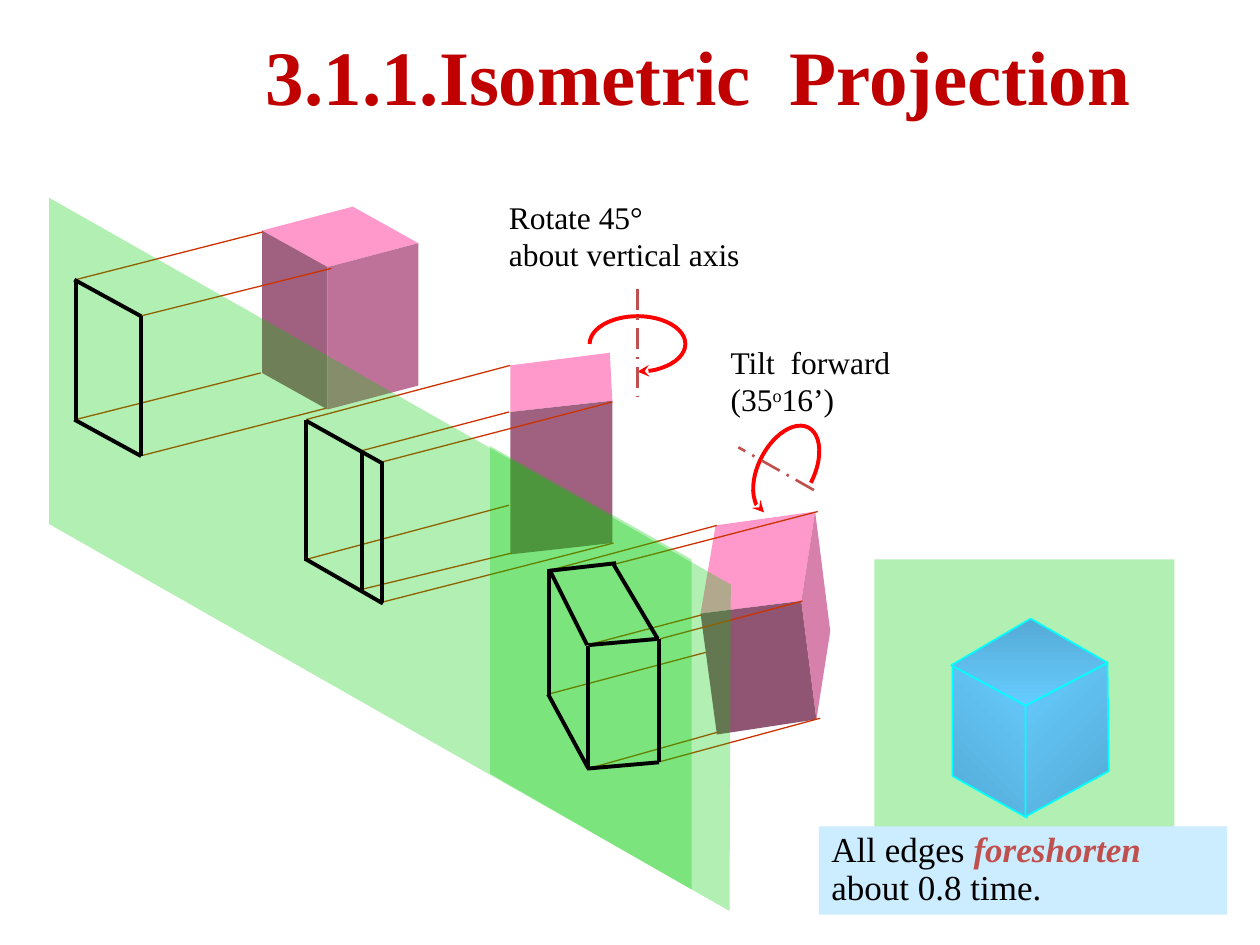
from lxml.etree import SubElement
from pptx import Presentation
from pptx.dml.color import RGBColor
from pptx.enum.dml import MSO_LINE
from pptx.enum.shapes import MSO_CONNECTOR, MSO_SHAPE
from pptx.enum.text import MSO_ANCHOR, MSO_AUTO_SIZE, PP_ALIGN
from pptx.oxml.ns import qn
from pptx.util import Cm, Pt

FONT = "Times New Roman"
BLACK = RGBColor(0x00, 0x00, 0x00)
TITLE_RED = RGBColor(0xC0, 0x00, 0x00)
ACCENT = RGBColor(0xC0, 0x50, 0x4D)
ARROW_RED = RGBColor(0xFF, 0x00, 0x00)
PROJECTOR = RGBColor(0xCC, 0x33, 0x00)
GREEN = RGBColor(0x00, 0xCC, 0x00)
CYAN = RGBColor(0x00, 0xFF, 0xFF)
BLUE_DARK = RGBColor(0x55, 0xAA, 0xD5)
BLUE_LIGHT = RGBColor(0x66, 0xCC, 0xFF)
CAPTION_BLUE = RGBColor(0xCC, 0xEC, 0xFF)
PINK = RGBColor(0xFF, 0x99, 0xCC)
PINK_RIGHT = RGBColor(0xBF, 0x72, 0x99)
PINK_SIDE = RGBColor(0xD6, 0x80, 0xAB)
PINK_FRONT = RGBColor(0xA0, 0x60, 0x80)
PINK_DARK = RGBColor(0x8F, 0x55, 0x73)

# All coordinates are in inches: points are (x, y), lines (x1, y1, x2, y2).
# Each stage: projectors behind the cube, cube faces, projectors in front.
STAGES = [
    ([],
     [(PINK, [(2.08, 1.83), (2.8, 1.64), (3.32, 1.93), (2.6, 2.12)]),
      (PINK_FRONT, [(2.08, 1.83), (2.6, 2.12), (2.6, 3.25), (2.08, 2.96)]),
      (PINK_RIGHT, [(2.6, 2.12), (3.32, 1.93), (3.32, 3.06), (2.6, 3.25)])],
     [(2.63, 2.13, 1.11, 2.51), (2.59, 3.24, 1.11, 3.62),
      (2.07, 2.96, 0.6, 3.33), (2.09, 1.84, 0.6, 2.22)]),
    ([],
     [(PINK, [(4.05, 2.9), (4.84, 2.8), (4.86, 3.18), (4.05, 3.27)]),
      (PINK_FRONT, [(4.05, 3.27), (4.86, 3.18), (4.86, 4.31), (4.05, 4.4)])],
     [(4.04, 3.27, 2.86, 3.58), (4.06, 4.39, 2.86, 4.68),
      (4.04, 4.01, 2.43, 4.44), (4.05, 2.9, 2.43, 3.33),
      (4.86, 3.19, 3.02, 3.67), (4.87, 4.31, 3.03, 4.78)]),
    ([(5.82, 5.12, 4.35, 5.51)],
     [(PINK, [(5.68, 4.17), (6.47, 4.06), (6.36, 4.77), (5.56, 4.87)]),
      (PINK_DARK, [(5.56, 4.87), (6.36, 4.77), (6.48, 5.71), (5.69, 5.83)]),
      (PINK_SIDE, [(6.47, 4.06), (6.59, 5.01), (6.48, 5.71), (6.36, 4.77)])],
     [(6.49, 4.06, 4.87, 4.48), (5.69, 4.17, 4.35, 4.53),
      (6.37, 4.77, 5.24, 5.07), (5.57, 4.88, 4.66, 5.12),
      (6.51, 5.7, 5.22, 6.05), (5.7, 5.81, 4.67, 6.1)]),
]
LARGE_PLANE = [(0.39, 1.57), (5.8, 4.64), (5.79, 7.23), (0.39, 4.16)]
SMALL_PLANE = [(3.89, 3.54), (3.89, 6.14), (5.49, 7.06), (5.49, 4.44)]
FIRST_VIEWS = [
    (2.43, 3.34, 3.04, 3.68), (2.43, 3.33, 2.43, 4.45), (2.87, 3.58, 2.87, 4.69),
    (3.03, 3.67, 3.03, 4.78), (2.43, 4.44, 3.04, 4.79),
    (0.59, 2.22, 1.12, 2.51), (1.12, 2.51, 1.12, 3.62),
    (0.59, 3.33, 1.12, 3.62), (0.6, 2.23, 0.6, 3.34),
]
ISOMETRIC_VIEW = [
    (5.23, 6.05, 5.23, 5.07), (5.23, 5.07, 4.67, 5.12), (5.22, 5.07, 4.87, 4.48),
    (4.89, 4.47, 4.36, 4.53), (4.36, 4.52, 4.66, 5.12), (4.67, 6.1, 4.67, 5.13),
    (4.36, 5.52, 4.36, 4.52), (5.23, 6.05, 4.66, 6.1), (4.35, 5.51, 4.67, 6.1),
]
# centre, rotation, arrowhead
TURNS = [((5.06, 2.73), 0, "tailEnd"), ((6.24, 3.73), 297.5, "headEnd")]
TURN_RADII = (0.38, 0.22)
AXES = [(6.46, 3.89, 5.86, 3.55), (5.06, 2.29, 5.06, 3.15)]
RESULT_PANEL = (6.94, 4.44, 2.38, 2.56)
# outline, gradient colours, counter-clockwise angle
RESULT_FACES = [
    ([(7.56, 5.28), (7.56, 6.16), (8.15, 6.49), (8.15, 5.6)], (BLUE_DARK, BLUE_LIGHT), 45),
    ([(8.8, 6.12), (8.14, 6.48), (8.14, 5.6), (8.79, 5.26)], (BLUE_LIGHT, BLUE_DARK), 315),
    ([(8.14, 5.6), (7.55, 5.28), (8.18, 4.91), (8.79, 5.26)], (BLUE_DARK, BLUE_LIGHT), 270),
]
TITLE = ((2.01, 0.18, 7.13, 0.84), "3.1.1.Isometric  Projection")
LABELS = [
    ((3.94, 1.52, 2.24, 0.7), [["Rotate 45°"], ["about vertical axis"]]),
    ((5.7, 2.67, 1.58, 0.7), [["Tilt  forward (35", "o", "16’)"]]),
]
CAPTION = ((6.5, 6.56, 3.24, 0.7), [["All edges ", "foreshorten"], ["about 0.8 time."]])


def lengths(*inches):
    return [Cm(value * 2.54) for value in inches]


def add_line(ends, color, width, dash=None):
    line = shapes.add_connector(MSO_CONNECTOR.STRAIGHT, *lengths(*ends))
    line.line.color.rgb = color
    line.line.width = Pt(width)
    if dash:
        line.line.dash_style = dash
    SubElement(line._element.spPr, qn("a:effectLst"))


def add_polygon(points):
    start, *others = [lengths(*point) for point in points]
    builder = shapes.build_freeform(*start, scale=1.0)
    builder.add_line_segments(others, close=True)
    polygon = builder.convert_to_shape()
    polygon.shadow.inherit = False
    polygon.line.fill.background()
    return polygon


def fill_solid(shape, color, opacity=100):
    shape.fill.solid()
    shape.fill.fore_color.rgb = color
    shape.line.fill.background()
    if opacity < 100:
        rgb = shape._element.spPr.find(qn("a:solidFill"))[0]
        SubElement(rgb, qn("a:alpha"), val=str(opacity * 1000))


def add_turn(center, rotation, arrow_end):
    """Three-quarter arc with an arrowhead at one end."""
    (x, y), (rx, ry) = center, TURN_RADII
    arc = shapes.add_shape(MSO_SHAPE.ARC, *lengths(x - rx, y - ry, 2 * rx, 2 * ry))
    for index, degrees in enumerate((180, 90)):
        arc.adjustments[index] = degrees * 0.6
    arc.rotation = rotation
    arc.shadow.inherit = False
    arc.fill.background()
    arc.line.color.rgb = ARROW_RED
    arc.line.width = Pt(2.25)
    SubElement(arc.line._get_or_add_ln(), qn("a:" + arrow_end), type="stealth")


def write(frame, paragraphs, size, spacing=None):
    frame.word_wrap = True
    for index, parts in enumerate(paragraphs):
        paragraph = frame.add_paragraph() if index else frame.paragraphs[0]
        paragraph.alignment = PP_ALIGN.LEFT
        paragraph.line_spacing = spacing
        for part in parts:
            run = paragraph.add_run()
            run.text = part
            run.font.name, run.font.size = FONT, Pt(size)
            run.font.color.rgb = BLACK
            if part == "foreshorten":
                run.font.bold = run.font.italic = True
                run.font.color.rgb = ACCENT
            elif part == "o":
                run.font._element.set("baseline", "30000")


deck = Presentation()
deck.slide_width, deck.slide_height = lengths(10, 7.5)
slide = deck.slides.add_slide(deck.slide_layouts[5])
shapes = slide.shapes

title = shapes.title
title.left, title.top, title.width, title.height = lengths(*TITLE[0])
title.text_frame.text = TITLE[1]
title.text_frame.word_wrap = False
title.text_frame.auto_size = MSO_AUTO_SIZE.NONE
title.text_frame.vertical_anchor = MSO_ANCHOR.TOP
heading = title.text_frame.paragraphs[0]
heading.alignment = PP_ALIGN.LEFT
heading.font.name, heading.font.size, heading.font.bold = FONT, Pt(44), True
heading.font.color.rgb = TITLE_RED
heading.runs[0].font.name = FONT

for behind, faces, in_front in STAGES:
    for projector in behind:
        add_line(projector, PROJECTOR, 0.75)
    for color, outline in faces:
        fill_solid(add_polygon(outline), color)
    for projector in in_front:
        add_line(projector, PROJECTOR, 0.75)

for plane, view in ((LARGE_PLANE, FIRST_VIEWS), (SMALL_PLANE, ISOMETRIC_VIEW)):
    fill_solid(add_polygon(plane), GREEN, 30)
    for edge in view:
        add_line(edge, BLACK, 2.25)

for turn in TURNS:
    add_turn(*turn)
for axis in AXES:
    add_line(axis, ACCENT, 1.5, MSO_LINE.LONG_DASH_DOT)
for box, paragraphs in LABELS:
    write(shapes.add_textbox(*lengths(*box)).text_frame, paragraphs, 18)

panel = shapes.add_shape(MSO_SHAPE.RECTANGLE, *lengths(*RESULT_PANEL))
panel.shadow.inherit = False
fill_solid(panel, GREEN, 30)
for outline, colors, angle in RESULT_FACES:
    face = add_polygon(outline)
    face.fill.gradient()
    face.fill.gradient_angle = angle
    for stop, color, position in zip(face.fill.gradient_stops, colors, (0, 1)):
        stop.color.rgb = color
        stop.position = position
    face.line.color.rgb = CYAN
    face.line.width = Pt(1)

caption = shapes.add_shape(MSO_SHAPE.RECTANGLE, *lengths(*CAPTION[0]))
caption.shadow.inherit = False
fill_solid(caption, CAPTION_BLUE)
caption.text_frame.vertical_anchor = MSO_ANCHOR.TOP
write(caption.text_frame, CAPTION[1], 20, 0.9)

deck.save("out.pptx")
